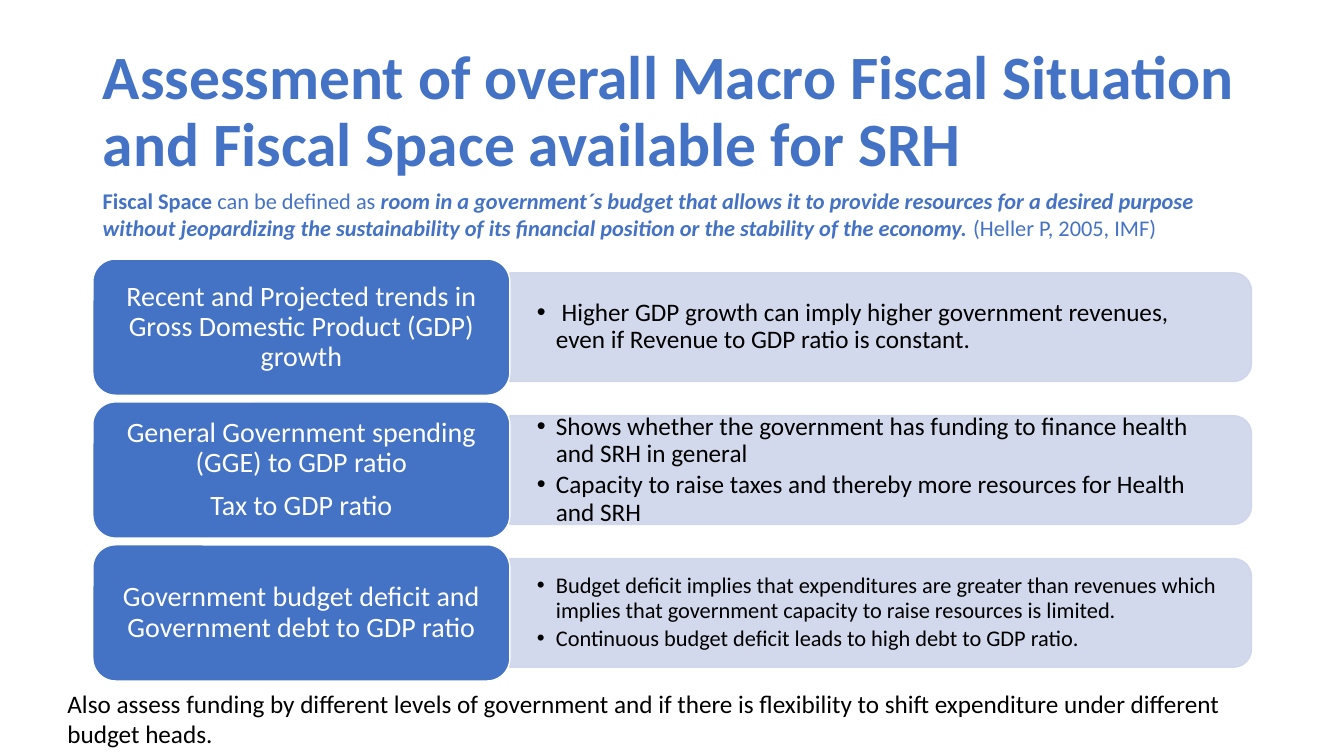
"""Build the slide on macro fiscal situation and fiscal space."""
from lxml.etree import SubElement
from pptx import Presentation
from pptx.dml.color import RGBColor
from pptx.enum.shapes import MSO_SHAPE
from pptx.enum.text import MSO_ANCHOR, PP_ALIGN
from pptx.oxml.ns import qn
from pptx.util import Cm, Pt

BLUE, PALE, WHITE, BLACK = "4472C4", "CFD5EA", "FFFFFF", "000000"
FONT = "Calibri"

TITLE = "Assessment of overall Macro Fiscal Situation and Fiscal Space available for SRH"
INTRO = [
    ("Fiscal Space ", {"bold": True}),
    ("can be defined as\u00a0", {}),
    ("room in a government´s budget that allows it to provide resources for a "
     "desired purpose without jeopardizing the sustainability of its financial "
     "position or the stability of the economy.", {"bold": True, "italic": True}),
    ("\u00a0(Heller P, 2005, IMF)", {}),
]
ROWS = [
    (["Recent and Projected trends in Gross Domestic Product (GDP) growth"], 18,
     [" Higher GDP growth can imply higher government revenues, even if Revenue "
      "to GDP ratio is constant."]),
    (["General Government spending (GGE) to GDP ratio", "Tax to GDP ratio"], 18,
     ["Shows whether the government has funding to finance health and SRH in general",
      "Capacity to raise taxes and thereby more resources for Health and SRH"]),
    (["Government budget deficit and Government debt to GDP ratio"], 16,
     ["Budget deficit implies that expenditures are greater than revenues which "
      "implies that government capacity to raise resources is limited.",
      "Continuous budget deficit leads to high debt to GDP ratio."]),
]
NOTE = ("Also assess funding by different levels of government and if there is "
        "flexibility to shift expenditure under different budget heads.")

LEFT, TOP, STEP = 2.34, 6.53, 3.6
CARD_W, CARD_H = 10.51, 3.43
BAND_W, BAND_H = 18.69, 2.74
LABEL_W, LABEL_H = 10.19, 3.1
BODY_W, BODY_H = 18.57, 2.46

LABEL = {"alignment": PP_ALIGN.CENTER, "line_spacing": 0.9, "space_after": Pt(9)}
BODY = {"line_spacing": 0.9, "space_after": Pt(3)}


def color(code):
    return RGBColor.from_string(code)


def apply(item, values):
    for name, value in values.items():
        setattr(item, name, value)


def write(para, runs, size, code, form):
    apply(para, form)
    for text, style in runs:
        run = para.add_run()
        run.text = text
        apply(run.font, {"name": FONT, "size": Pt(size), **style})
        run.font.color.rgb = color(code)


def fill(frame, paras, size, code, form):
    for at, runs in enumerate(paras):
        para = frame.add_paragraph() if at else frame.paragraphs[0]
        write(para, runs, size, code, form)


def plain(lines):
    return [[(line, {})] for line in lines]


def box(slide, x, y, w, h, pad=None, anchor=MSO_ANCHOR.TOP):
    frame = slide.shapes.add_textbox(Cm(x), Cm(y), Cm(w), Cm(h)).text_frame
    apply(frame, {"word_wrap": True, "vertical_anchor": anchor})
    if pad:
        side, edge = Cm(pad[0]), Cm(pad[1])
        apply(frame, {"margin_left": side, "margin_right": side,
                      "margin_top": edge, "margin_bottom": edge})
    return frame


def shape(slide, kind, x, y, w, h, paint, line):
    item = slide.shapes.add_shape(kind, Cm(x), Cm(y), Cm(w), Cm(h))
    item.shadow.inherit = False
    item.fill.solid()
    item.fill.fore_color.rgb = color(paint)
    item.line.color.rgb = color(line)
    item.line.width = Pt(1)
    return item


def bullet(para):
    props = para._p.get_or_add_pPr()
    props.set("marL", str(Cm(0.48)))
    props.set("indent", str(-Cm(0.48)))
    SubElement(props, qn("a:buFont"), typeface="Arial")
    SubElement(props, qn("a:buChar"), char="•")


def band(slide, x, mid):
    item = shape(slide, MSO_SHAPE.ROUND_2_SAME_RECTANGLE,
                 x + (BAND_W - BAND_H) / 2, mid - BAND_W / 2,
                 BAND_H, BAND_W, PALE, PALE)
    item.rotation = 90
    for tint in item._element.spPr.iter(qn("a:srgbClr")):
        SubElement(tint, qn("a:alpha"), val="90000")


def row(slide, top, heads, size, points):
    mid, edge = top + CARD_H / 2, LEFT + CARD_W
    band(slide, edge, mid)
    body = box(slide, edge, mid - BODY_H / 2, BODY_W, BODY_H,
               (0.68, 0.36), MSO_ANCHOR.MIDDLE)
    fill(body, plain(points), size, BLACK, BODY)
    for para in body.paragraphs:
        bullet(para)
    shape(slide, MSO_SHAPE.ROUNDED_RECTANGLE, LEFT, top, CARD_W, CARD_H, BLUE, WHITE)
    label = box(slide, LEFT + (CARD_W - LABEL_W) / 2, mid - LABEL_H / 2,
                LABEL_W, LABEL_H, (0.2, 0.1), MSO_ANCHOR.MIDDLE)
    fill(label, plain(heads), 20, WHITE, LABEL)


def main():
    deck = Presentation()
    apply(deck, {"slide_width": Cm(33.87), "slide_height": Cm(19.05)})
    slide = deck.slides.add_slide(deck.slide_layouts[5])
    title = slide.shapes.title
    apply(title, {"left": Cm(LEFT), "top": Cm(1.01),
                  "width": Cm(29.21), "height": Cm(3.68)})
    apply(title.text_frame, {"word_wrap": True, "vertical_anchor": MSO_ANCHOR.MIDDLE})
    fill(title.text_frame, [[(TITLE, {"bold": True})]], 44, BLUE,
         {"alignment": PP_ALIGN.LEFT, "line_spacing": 0.9})
    for at, (heads, size, points) in enumerate(ROWS):
        row(slide, TOP + at * STEP, heads, size, points)
    fill(box(slide, 1.45, 17.22, 30.5, 1.8), plain([NOTE]), 18, BLACK, {})
    fill(box(slide, LEFT, 4.6, 28.88, 1.63), [INTRO], 16, BLUE, {})
    deck.save("out.pptx")


if __name__ == "__main__":
    main()
